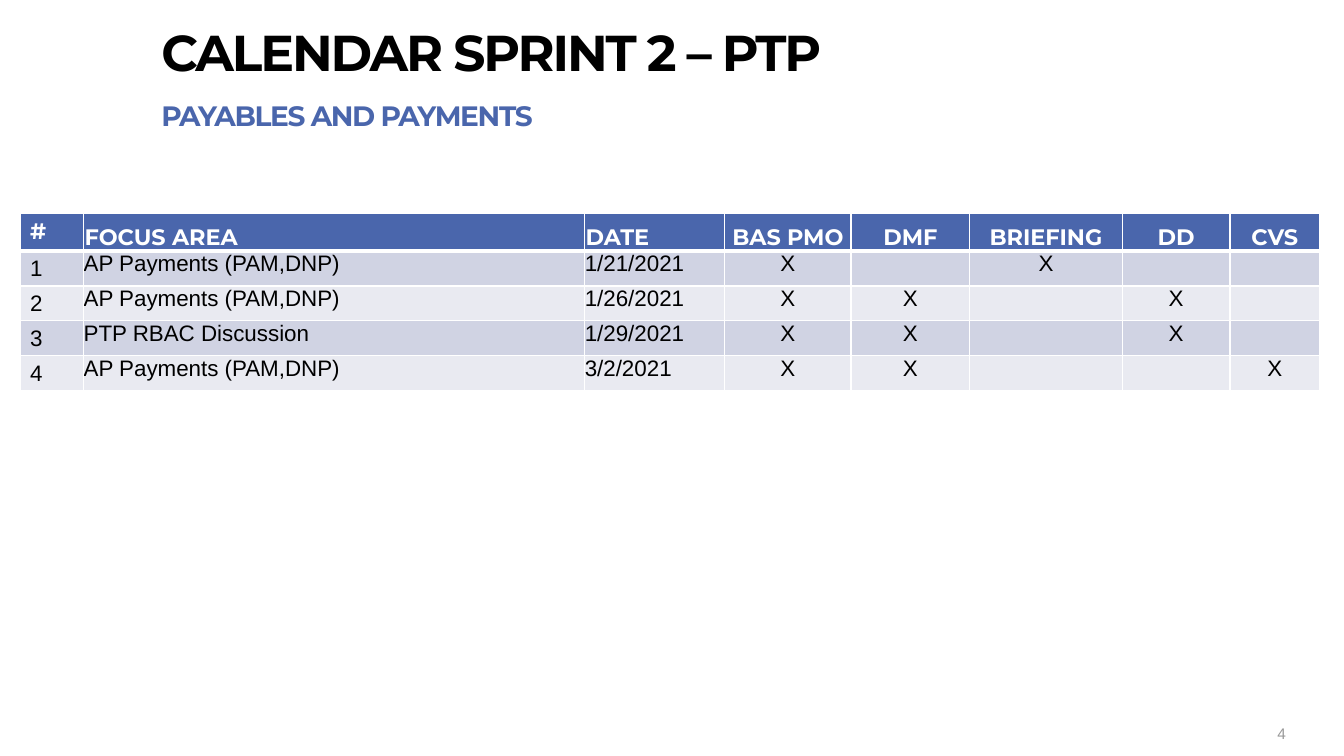
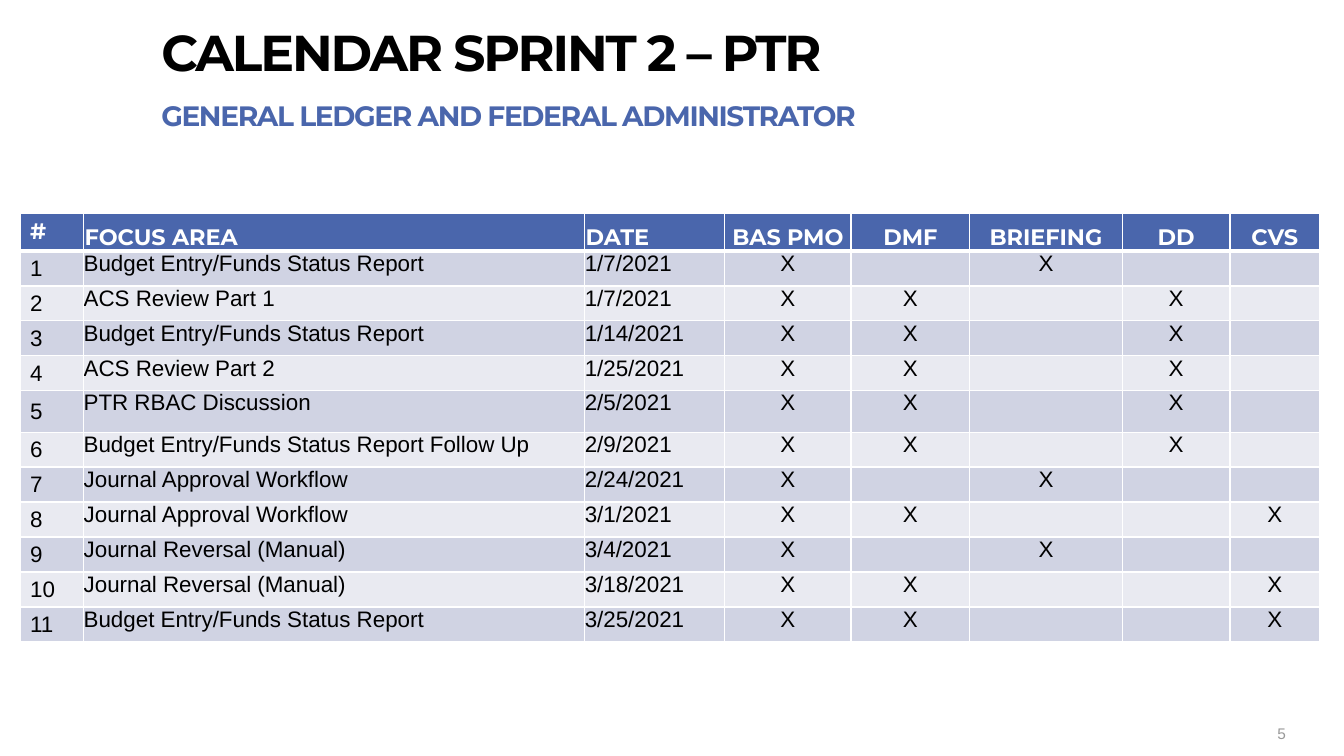
from pptx import Presentation
from pptx.dml.color import RGBColor
from pptx.enum.text import MSO_ANCHOR, MSO_AUTO_SIZE, PP_ALIGN
from pptx.oxml import parse_xml
from pptx.oxml.ns import nsdecls
from pptx.util import Inches, Pt

# Content: focus area, date, kind of session
SESSIONS = {
    "BRIEFING": ("BAS PMO", "BRIEFING"),
    "DD": ("BAS PMO", "DMF", "DD"),
    "CVS": ("BAS PMO", "DMF", "CVS"),
}
CALENDARS = [
    {
        "title": "CALENDAR SPRINT 2 – PTP",
        "subtitle": "PAYABLES AND PAYMENTS",
        "meetings": [
            ("AP Payments (PAM,DNP)", "1/21/2021", "BRIEFING"),
            ("AP Payments (PAM,DNP)", "1/26/2021", "DD"),
            ("PTP RBAC Discussion", "1/29/2021", "DD"),
            ("AP Payments (PAM,DNP)", "3/2/2021", "CVS"),
        ],
        "tall_rows": (),
    },
    {
        "title": "CALENDAR SPRINT 2 – PTR",
        "subtitle": "GENERAL LEDGER AND FEDERAL ADMINISTRATOR",
        "meetings": [
            ("Budget Entry/Funds Status Report", "1/7/2021", "BRIEFING"),
            ("ACS Review Part 1", "1/7/2021", "DD"),
            ("Budget Entry/Funds Status Report", "1/14/2021", "DD"),
            ("ACS Review Part 2", "1/25/2021", "DD"),
            ("PTR RBAC Discussion", "2/5/2021", "DD"),
            ("Budget Entry/Funds Status Report Follow Up", "2/9/2021", "DD"),
            ("Journal Approval Workflow", "2/24/2021", "BRIEFING"),
            ("Journal Approval Workflow", "3/1/2021", "CVS"),
            ("Journal Reversal (Manual)", "3/4/2021", "BRIEFING"),
            ("Journal Reversal (Manual)", "3/18/2021", "CVS"),
            ("Budget Entry/Funds Status Report", "3/25/2021", "CVS"),
        ],
        "tall_rows": (5,),
    },
]
FIRST_PAGE = 4
COLUMNS = {"#": 0.63, "FOCUS AREA": 4.97, "DATE": 1.39, "BAS PMO": 1.25,
           "DMF": 1.18, "BRIEFING": 1.51, "DD": 1.07, "CVS": 0.89}
GROUPS = list(COLUMNS)[3:]

# Shared look
BLACK = RGBColor(0x00, 0x00, 0x00)
WHITE = RGBColor(0xFF, 0xFF, 0xFF)
BLUE = RGBColor(0x4A, 0x66, 0xAC)
GREY = RGBColor(0x99, 0x99, 0x99)
BANDS = (RGBColor(0xD0, 0xD3, 0xE3), RGBColor(0xE9, 0xEA, 0xF1))

TITLE = {"name": "Montserrat", "size": Pt(36), "bold": True, "color": BLACK}
SUBTITLE = {"name": "Montserrat", "size": Pt(20), "bold": True, "color": BLUE}
HEADING = {"name": "Montserrat", "size": Pt(16), "bold": True, "color": WHITE}
BODY = {"name": "Arial", "size": Pt(16), "bold": False, "color": BLACK}
PAGE_NUMBER = {"name": "Arial", "size": Pt(11), "bold": False, "color": GREY}

# Cell margins: left, top, right, bottom
HEADING_MARGINS = (0.01, 0.01, 0.01, 0)
NUMBER_MARGINS = (0.1, 0.04, 0.1, 0.04)
NO_MARGINS = (0, 0, 0, 0)
HEADING_HEIGHT, ROW_HEIGHT, TALL_HEIGHT = Inches(0.37), Pt(25), Inches(0.41)


def set_font(font, look):
    for key, value in look.items():
        if key == "color":
            font.color.rgb = value
        else:
            setattr(font, key, value)


def set_margins(holder, margins):
    for side, value in zip(("left", "top", "right", "bottom"), margins):
        setattr(holder, f"margin_{side}", Inches(value))


def write_line(box, text, look, margins, line_spacing=1.0, tracking=0):
    frame = box.text_frame
    frame.word_wrap = True
    frame.auto_size = MSO_AUTO_SIZE.NONE
    frame.vertical_anchor = MSO_ANCHOR.TOP
    set_margins(frame, margins)
    para = frame.paragraphs[0]
    para.alignment = PP_ALIGN.LEFT
    para.line_spacing = line_spacing
    span = para.add_run()
    span.text = text
    set_font(span.font, look)
    if tracking:
        span.font._element.set("spc", str(tracking))


def add_box(page, *place):
    return page.shapes.add_textbox(*map(Inches, place))


def add_borders(cell, bottom_width):
    properties = cell._tc.get_or_add_tcPr()
    for side, width in (("L", 1), ("R", 1), ("T", 1), ("B", bottom_width)):
        properties.append(parse_xml(
            f'<a:ln{side} {nsdecls("a")} w="{Pt(width)}"><a:solidFill>'
            f'<a:srgbClr val="{WHITE}"/></a:solidFill></a:ln{side}>'))


def fill_cell(cell, text, column, row):
    is_heading, is_number = row == 0, column == 0
    add_borders(cell, 3 if is_heading else 1)
    cell.fill.solid()
    cell.fill.fore_color.rgb = BLUE if is_heading else BANDS[(row - 1) % 2]
    if is_number:
        set_margins(cell, NUMBER_MARGINS)
    else:
        set_margins(cell, HEADING_MARGINS if is_heading else NO_MARGINS)
    if is_heading != is_number:
        cell.vertical_anchor = MSO_ANCHOR.BOTTOM if is_heading else MSO_ANCHOR.MIDDLE
    else:
        cell.vertical_anchor = MSO_ANCHOR.TOP
    para = cell.text_frame.paragraphs[0]
    para.alignment = PP_ALIGN.CENTER if column > 2 else PP_ALIGN.LEFT
    look = HEADING if is_heading else BODY
    set_font(para.font, look)
    if text:
        span = para.add_run()
        span.text = text
        set_font(span.font, look)


def add_calendar(page, meetings, tall_rows):
    rows = [list(COLUMNS)]
    for number, (focus, date, session) in enumerate(meetings, 1):
        marks = ["X" if group in SESSIONS[session] else "" for group in GROUPS]
        rows.append([str(number), focus, date, *marks])
    heights = [HEADING_HEIGHT] + [
        TALL_HEIGHT if number in tall_rows else ROW_HEIGHT
        for number in range(1, len(rows))]
    table = page.shapes.add_table(
        len(rows), len(COLUMNS), Inches(0.2), Inches(2.12),
        Inches(sum(COLUMNS.values())), sum(heights)).table
    table.horz_banding = False
    for column, width in zip(table.columns, COLUMNS.values()):
        column.width = Inches(width)
    for row, (texts, height) in enumerate(zip(rows, heights)):
        table.rows[row].height = height
        for column, text in enumerate(texts):
            fill_cell(table.cell(row, column), text, column, row)


def add_page(deck, number, calendar):
    page = deck.slides.add_slide(deck.slide_layouts.get_by_name("Title Only"))
    title = page.shapes.title
    title.left, title.top, title.width, title.height = map(
        Inches, (1.6, 0.26, 10.24, 0.56))
    write_line(title, calendar["title"], TITLE, (0, 0.07, 0, 0), 0.8, -150)
    write_line(add_box(page, 1.6, 0.94, 10.14, 0.56), calendar["subtitle"],
               SUBTITLE, NO_MARGINS, 1.1, -100)
    add_calendar(page, calendar["meetings"], calendar["tall_rows"])
    write_line(add_box(page, 12.57, 7.13, 0.42, 0.23), str(number),
               PAGE_NUMBER, (0.1, 0.05, 0.1, 0.05))


def main():
    deck = Presentation()
    deck.slide_width, deck.slide_height = Inches(13.33), Inches(7.5)
    for number, calendar in enumerate(CALENDARS, FIRST_PAGE):
        add_page(deck, number, calendar)
    deck.save("out.pptx")


if __name__ == "__main__":
    main()
